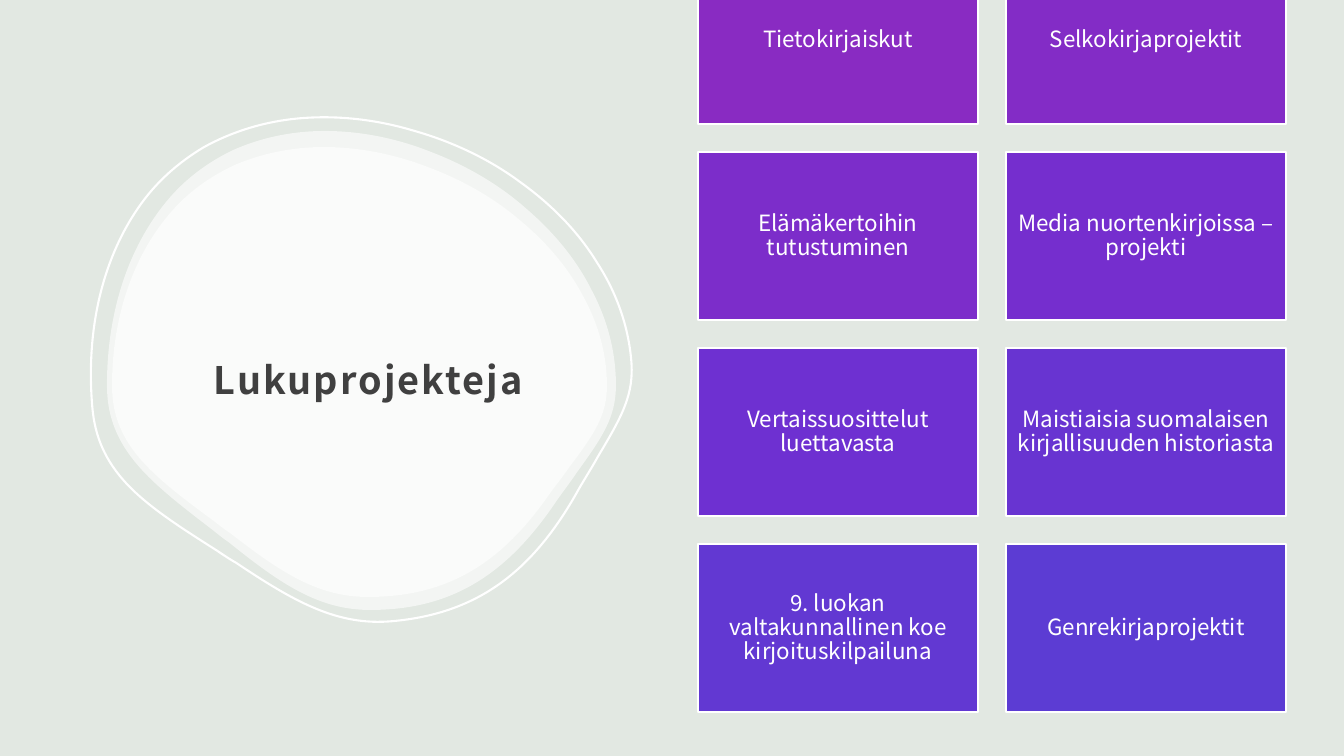
"""Build the slide of reading projects: a titled blob beside a grid of tiles."""
from pptx import Presentation
from pptx.dml.color import RGBColor
from pptx.enum import shapes, text
from pptx.oxml import ns
from pptx.util import Pt
from lxml import etree

HEAD = "Lukuprojekteja"
TILES = [
    ("Tietokirjaiskut", RGBColor(0x89, 0x2B, 0xC2)),
    ("Selkokirjaprojektit", RGBColor(0x83, 0x2C, 0xC6)),
    ("Elämäkertoihin tutustuminen", RGBColor(0x7C, 0x2D, 0xCA)),
    ("Media nuortenkirjoissa –projekti", RGBColor(0x75, 0x2E, 0xCE)),
    ("Vertaissuosittelut luettavasta", RGBColor(0x6E, 0x30, 0xD1)),
    ("Maistiaisia suomalaisen kirjallisuuden historiasta",
     RGBColor(0x68, 0x34, 0xD1)),
    ("9. luokan valtakunnallinen koe kirjoituskilpailuna",
     RGBColor(0x62, 0x38, 0xD2)),
    ("Genrekirjaprojektit", RGBColor(0x5C, 0x3C, 0xD3)),
]
WHITE = RGBColor(0xFF, 0xFF, 0xFF)
SAGE = RGBColor(0xE2, 0xE8, 0xE2)
GREY = RGBColor(0x40, 0x40, 0x40)
FACE = "Noto Sans CJK JP"

WIDE, HIGH = 1344, 756
SCALE = 12192000 / WIDE
DISCS = [(107, 131, 509, 479), (112, 147, 495, 450)]
RING, TILT = (90, 114, 541, 509), -5
TITLE = (202, 210, 365, 324)
GRID = {"left": 698, "top": -44, "wide": 280, "high": 168, "gap": 28, "cols": 2}

BLOB_SIZE = (505, 475)
START = (216, 0)
CURVES = [
    ((183, 0), (152, 7), (125, 19)),
    ((100, 31), (77, 48), (59, 70)),
    ((21, 116), (0, 180), (0, 252)),
    ((0, 280), (8, 303), (26, 326)),
    ((45, 350), (74, 372), (104, 395)),
    ((109, 399), (115, 404), (121, 408)),
    ((172, 449), (210, 475), (261, 475)),
    ((339, 475), (395, 443), (446, 367)),
    ((453, 357), (460, 348), (466, 339)),
    ((492, 303), (505, 284), (505, 252)),
    ((505, 220), (497, 188), (481, 158)),
    ((466, 128), (444, 101), (416, 77)),
    ((389, 53), (356, 34), (322, 21)),
    ((287, 7), (251, 0), START),
]
HEAD_FONT = {"name": FACE, "size": Pt(27), "bold": True}
TILE_FONT = {"name": FACE, "size": Pt(16), "bold": False}


def px(num):
    return round(num * SCALE)


def assign(obj, vals):
    for key, val in vals.items():
        setattr(obj, key, val)


def bend(blob):
    lines = list(blob.element.iter(ns.qn("a:lnTo")))
    for num in range(0, 3 * len(CURVES), 3):
        trio = lines[num:num + 3]
        curve = etree.Element(ns.qn("a:cubicBezTo"))
        trio[0].addprevious(curve)
        for line in trio:
            curve.append(line[0])
            line.getparent().remove(line)


def add_blob(slide, box):
    left, top, wide, high = box
    pts = [(px(left + x * wide / BLOB_SIZE[0]), px(top + y * high / BLOB_SIZE[1]))
           for x, y in [START] + [pt for curve in CURVES for pt in curve]]
    pen = slide.shapes.build_freeform(*pts[0])
    pen.add_line_segments(pts[1:], close=True)
    blob = pen.convert_to_shape()
    bend(blob)
    blob.shadow.inherit = False
    return blob


def write(shape, words, font, color, align, space, pads):
    frame = shape.text_frame
    frame.text = words
    sides = ("margin_left", "margin_top", "margin_right", "margin_bottom")
    assign(frame, dict(zip(sides, map(px, pads))))
    assign(frame, {"word_wrap": True, "auto_size": text.MSO_AUTO_SIZE.NONE,
                   "vertical_anchor": text.MSO_ANCHOR.MIDDLE})
    para = frame.paragraphs[0]
    assign(para, {"alignment": align, "line_spacing": space})
    run = para.runs[0]
    assign(run.font, font)
    run.font.color.rgb = color


def add_discs(slide):
    for box in DISCS:
        disc = add_blob(slide, box)
        disc.fill.solid()
        disc.fill.fore_color.rgb = WHITE
        disc.line.fill.background()
        tone = next(disc.element.spPr.iter(ns.qn("a:srgbClr")))
        etree.SubElement(tone, ns.qn("a:alpha"), val="60000")
    ring = add_blob(slide, RING)
    ring.fill.background()
    ring.line.color.rgb = WHITE
    ring.line.width = Pt(1.5)
    ring.rotation = TILT


def add_title(slide):
    title = slide.shapes.title
    assign(title, dict(zip(("left", "top", "width", "height"), map(px, TITLE))))
    write(title, HEAD, HEAD_FONT, GREY, text.PP_ALIGN.LEFT, 1.3,
          (12, 12, 12, 10))
    next(title.element.iter(ns.qn("a:rPr"))).set("spc", "150")
    title.element.getparent().append(title.element)


def add_tiles(slide):
    wide, high, gap = GRID["wide"], GRID["high"], GRID["gap"]
    for num, (words, color) in enumerate(TILES):
        row, col = divmod(num, GRID["cols"])
        box = (GRID["left"] + col * (wide + gap),
               GRID["top"] + row * (high + gap), wide, high)
        tile = slide.shapes.add_shape(shapes.MSO_SHAPE.RECTANGLE, *map(px, box))
        tile.shadow.inherit = False
        tile.fill.solid()
        tile.fill.fore_color.rgb = color
        tile.line.color.rgb = WHITE
        tile.line.width = Pt(1)
        write(tile, words, TILE_FONT, WHITE, text.PP_ALIGN.CENTER, 0.9, (7,) * 4)


def main():
    deck = Presentation()
    assign(deck, {"slide_width": px(WIDE), "slide_height": px(HIGH)})
    slide = deck.slides.add_slide(deck.slide_layouts[5])
    slide.background.fill.solid()
    slide.background.fill.fore_color.rgb = SAGE
    add_discs(slide)
    add_title(slide)
    add_tiles(slide)
    deck.save("out.pptx")


if __name__ == "__main__":
    main()
